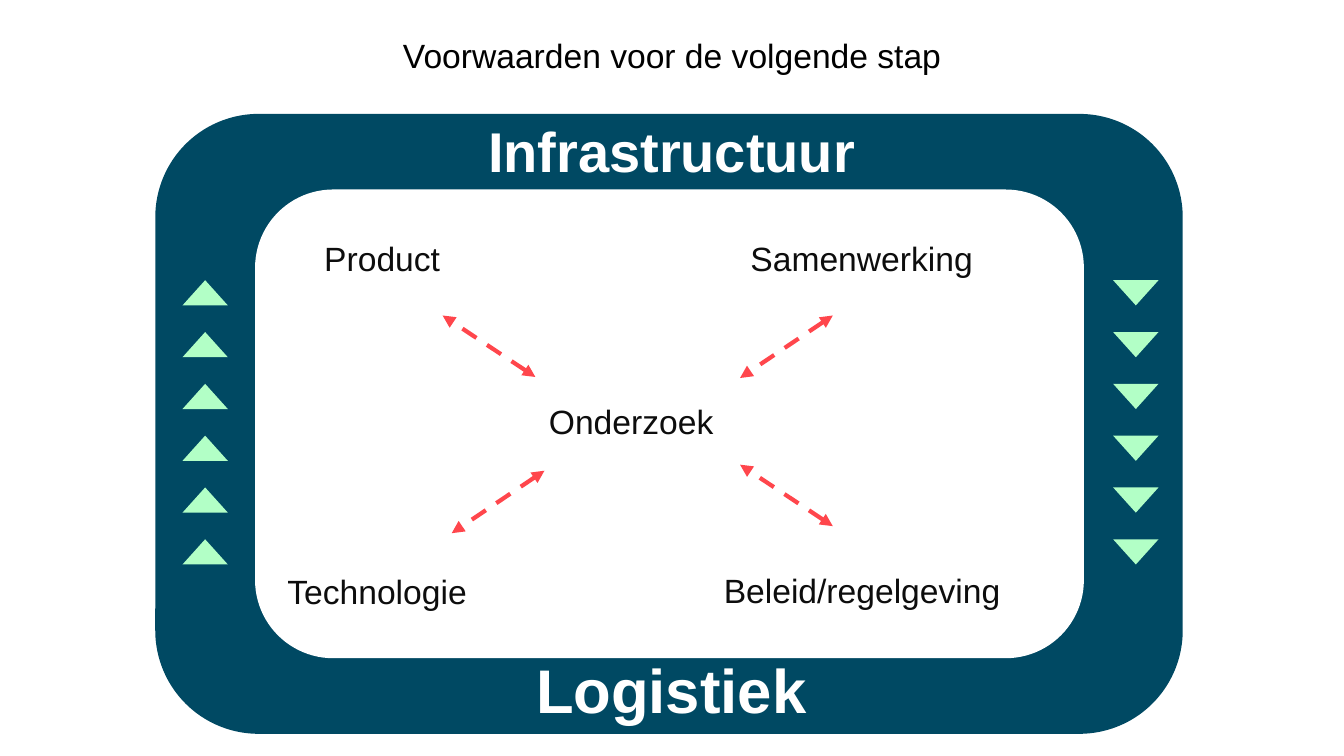
from dataclasses import dataclass

from lxml.etree import SubElement
from pptx import Presentation
from pptx.dml.color import RGBColor
from pptx.enum.dml import MSO_LINE
from pptx.enum.shapes import MSO_CONNECTOR, MSO_SHAPE
from pptx.enum.text import PP_ALIGN
from pptx.oxml.ns import qn
from pptx.util import Inches, Pt


@dataclass(frozen=True)
class Theme:
    """Colours, font and type sizes of the slide."""
    frame: str = "004963"
    white: str = "FFFFFF"
    title: str = "000000"
    label: str = "0D0D0D"
    marker: str = "B2FFC6"
    arrow: str = "FF464C"
    font: str = "Arial"
    body_size: int = 24
    top_size: int = 40
    bottom_size: int = 44
    arrow_width: int = 3


@dataclass(frozen=True)
class Box:
    """A rectangle in inches."""
    left: float
    top: float
    width: float
    height: float

    def inside(self, left, top, width, height):
        """Return a box placed relative to this one."""
        return Box(self.left + left, self.top + top, width, height)

    def lengths(self):
        """Return the four values as slide lengths."""
        return [Inches(value) for value in (self.left, self.top, self.width, self.height)]


THEME = Theme()


def add_text(slide, box, text, size=THEME.body_size, color=THEME.label, bold=False):
    """Add one centred line of text."""
    frame = slide.shapes.add_textbox(*box.lengths()).text_frame
    frame.word_wrap = True
    paragraph = frame.paragraphs[0]
    paragraph.alignment = PP_ALIGN.CENTER
    run = paragraph.add_run()
    run.text = text
    run.font.name = THEME.font
    run.font.size = Pt(size)
    run.font.bold = bold
    run.font.color.rgb = RGBColor.from_string(color)


def add_solid(slide, kind, box, color, rotation=0):
    """Add a filled shape without outline or shadow."""
    shape = slide.shapes.add_shape(kind, *box.lengths())
    shape.shadow.inherit = False
    shape.fill.solid()
    shape.fill.fore_color.rgb = RGBColor.from_string(color)
    shape.line.fill.background()
    shape.rotation = rotation


def add_double_arrow(slide, box, start, end):
    """Add a dashed line with heads at both ends, relative to the box."""
    points = [Inches(origin + offset) for point in (start, end)
              for origin, offset in zip((box.left, box.top), point)]
    connector = slide.shapes.add_connector(MSO_CONNECTOR.STRAIGHT, *points)
    line = connector.line
    line.color.rgb = RGBColor.from_string(THEME.arrow)
    line.width = Pt(THEME.arrow_width)
    line.dash_style = MSO_LINE.DASH
    properties = connector._element.spPr
    for tag in ("a:headEnd", "a:tailEnd"):
        SubElement(properties.find(qn("a:ln")), qn(tag), type="triangle")
    SubElement(properties, qn("a:effectLst"))


def draw_markers(slide, box, rotation, count=6):
    """Spread a column of triangles evenly over the box."""
    height = 0.25
    pitch = (box.height - height) / (count - 1)
    for index in range(count):
        marker = box.inside(0, index * pitch, box.width, height)
        add_solid(slide, MSO_SHAPE.ISOSCELES_TRIANGLE, marker, THEME.marker, rotation)


def draw_frame(slide, box):
    """Draw the dark frame with its headings and marker columns."""
    add_solid(slide, MSO_SHAPE.ROUNDED_RECTANGLE, box, THEME.frame)
    headings = [("Infrastructuur", -0.02, 0.77, THEME.top_size),
                ("Logistiek", 5.29, 0.84, THEME.bottom_size)]
    for text, top, height, size in headings:
        add_text(slide, box.inside(2.96, top, 4.32, height), text,
                 size=size, color=THEME.white, bold=True)
    for left, rotation in ((0.27, 0), (9.5, 180)):
        draw_markers(slide, box.inside(left, 1.65, 0.45, 2.82), rotation)


def draw_themes(slide, box):
    """Draw the white panel with research linked to four themes."""
    add_solid(slide, MSO_SHAPE.ROUNDED_RECTANGLE, box, THEME.white)
    labels = [("Product", 0.45, 0.43, 1.62),
              ("Samenwerking", 4.69, 0.43, 2.65),
              ("Onderzoek", 2.7, 2.05, 2.06),
              ("Technologie", 0.18, 3.73, 2.06),
              ("Beleid/regelgeving", 4.39, 3.72, 3.26)]
    for text, left, top, width in labels:
        add_text(slide, box.inside(left, top, width, 0.5), text)
    arrows = [((2.78, 1.86), (1.86, 1.25)),
              ((5.73, 1.25), (4.81, 1.87)),
              ((2.87, 2.79), (1.95, 3.41)),
              ((5.73, 3.34), (4.81, 2.73))]
    for start, end in arrows:
        add_double_arrow(slide, box, start, end)


def main():
    """Build and save the presentation."""
    presentation = Presentation()
    presentation.slide_width = Inches(13.33)
    presentation.slide_height = Inches(7.5)
    slide = presentation.slides.add_slide(presentation.slide_layouts[6])
    add_text(slide, Box(3.79, 0.3, 5.75, 0.5), "Voorwaarden voor de volgende stap",
             color=THEME.title)
    frame = Box(1.54, 1.13, 10.19, 6.15)
    draw_frame(slide, frame)
    draw_themes(slide, frame.inside(0.99, 0.75, 8.22, 4.65))
    presentation.save("out.pptx")


if __name__ == "__main__":
    main()
